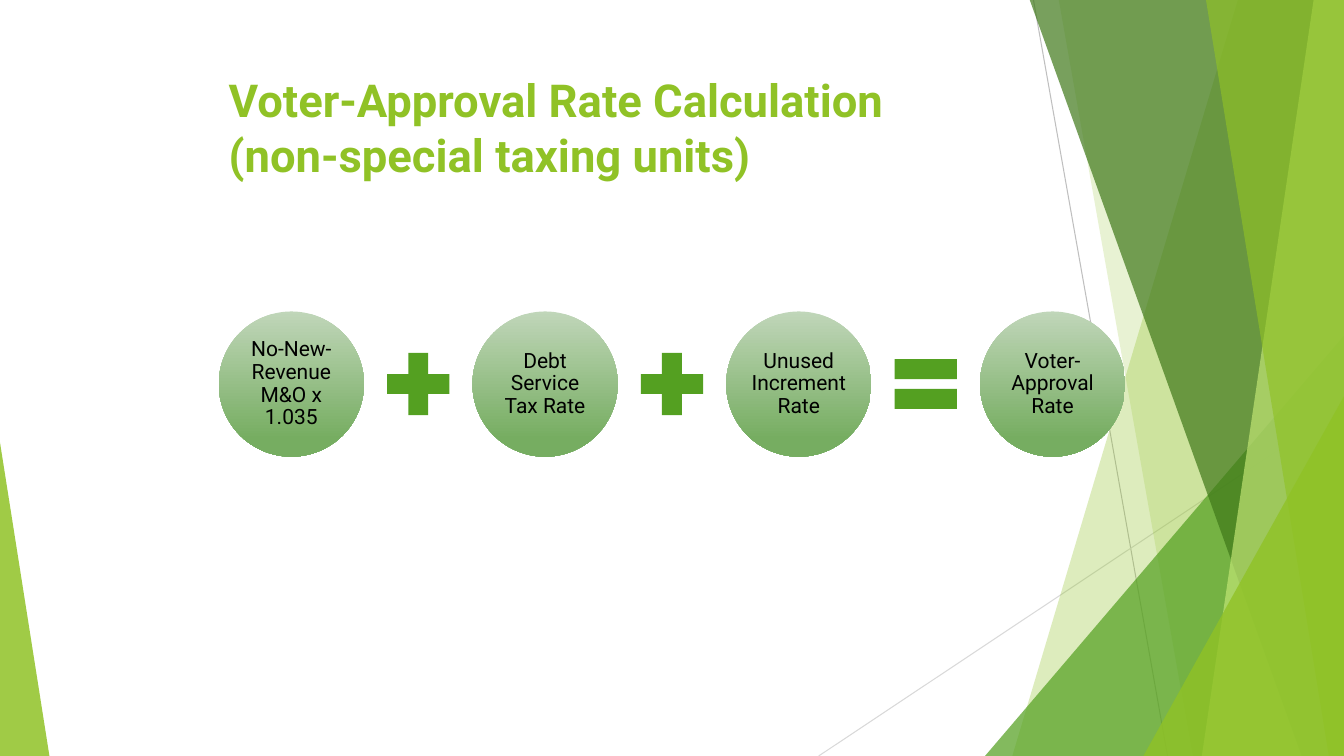
from pptx import Presentation
from pptx.dml.color import RGBColor
from pptx.enum.shapes import MSO_CONNECTOR, MSO_SHAPE
from pptx.enum.text import MSO_ANCHOR, PP_ALIGN
from pptx.oxml.ns import qn
from pptx.util import Inches, Pt
from lxml.etree import SubElement

LIME, GREEN, BLACK = "90C226", "54A021", "000000"


def color(code):
    return RGBColor.from_string(code)


class SlideBuilder:
    """Holds the style and the current page."""

    font = "Roboto"
    gradient = [(0, "C0D6B9"), (0.88, "76AD61")]

    def __init__(self, page):
        self.page = page

    def line(self, start, end, code):
        ends = [Inches(value) for value in start + end]
        connector = self.page.shapes.add_connector(MSO_CONNECTOR.STRAIGHT, *ends)
        connector.line.color.rgb = color(code)
        connector.line.width = Pt(0.75)
        SubElement(connector._element.spPr, qn("a:effectLst"))

    def paint(self, shape, code, opacity=100):
        shape.shadow.inherit = False
        shape.line.fill.background()
        shape.fill.solid()
        shape.fill.fore_color.rgb = color(code)
        if opacity < 100:
            tone = shape._element.spPr.find(".//" + qn("a:srgbClr"))
            SubElement(tone, qn("a:alpha"), val=str(opacity * 1000))

    def band(self, points, code, opacity):
        corners = [(Inches(x), Inches(y)) for x, y in points]
        outline = self.page.shapes.build_freeform(*corners[0], scale=1.0)
        outline.add_line_segments(corners[1:], close=True)
        self.paint(outline.convert_to_shape(), code, opacity)

    def shape(self, kind, place, code, opacity=100, apex=None):
        shape = self.page.shapes.add_shape(kind, *[Inches(value) for value in place])
        if apex is not None:
            shape.adjustments[0] = apex
        self.paint(shape, code, opacity)
        return shape

    def fill_text(self, frame, lines, frame_format, para_format, font_format, code):
        for name, value in frame_format.items():
            setattr(frame, name, value)
        para = frame.paragraphs[0]
        for name, value in para_format.items():
            setattr(para, name, value)
        for index, text in enumerate(lines):
            if index:
                para.add_line_break()
            span = para.add_run()
            span.text = text
            for name, value in font_format.items():
                setattr(span.font, name, value)
            span.font.name = self.font
            span.font.color.rgb = color(code)

    def title(self, place, lines):
        box = self.page.shapes.add_textbox(*[Inches(value) for value in place])
        self.fill_text(box.text_frame, lines,
                       {"word_wrap": True, "vertical_anchor": MSO_ANCHOR.TOP},
                       {"alignment": PP_ALIGN.LEFT},
                       {"size": Pt(32.4), "bold": True}, LIME)

    def circle(self, place, text):
        circle = self.shape(MSO_SHAPE.OVAL, place, GREEN)
        circle.fill.gradient()
        circle.fill.gradient_angle = 270
        for stop, (position, code) in zip(circle.fill.gradient_stops, self.gradient):
            stop.position = position
            stop.color.rgb = color(code)
        sides = ("left", "top", "right", "bottom")
        frame_format = {f"margin_{side}": Inches(0.02) for side in sides}
        frame_format.update(word_wrap=True, vertical_anchor=MSO_ANCHOR.MIDDLE)
        self.fill_text(circle.text_frame, [text], frame_format,
                       {"alignment": PP_ALIGN.CENTER, "line_spacing": 0.9},
                       {"size": Pt(15)}, BLACK)


def main():
    deck = Presentation()
    deck.slide_width, deck.slide_height = Inches(13.33), Inches(7.5)
    builder = SlideBuilder(deck.slides.add_slide(deck.slide_layouts[6]))

    # Background facets, from back to front
    right, top, bottom = 13.33, -0.01, 7.5

    def facet(top_x, bottom_x, code, opacity):
        points = [(top_x, top), (right, top), (right, bottom), (bottom_x, bottom)]
        builder.band(points, code, opacity)

    def corner(left, peak, width, code, opacity, apex):
        place = (left, peak, width, bottom - peak)
        builder.shape(MSO_SHAPE.ISOSCELES_TRIANGLE, place, code, opacity, apex)

    builder.line((10.25, 0), (11.58, bottom), "BFBFBF")
    builder.line((right, 4.03), (8.12, bottom), "D9D9D9")
    facet(12.28, 10.04, LIME, 30)
    facet(10.5, 11.83, LIME, 20)
    corner(9.77, 3.33, 3.56, GREEN, 72, 1)
    facet(10.21, 12.91, "3F7819", 70)
    facet(13.03, 11.92, "C0E474", 70)
    facet(11.96, 13.18, LIME, 65)
    corner(11.34, 3.93, 1.99, LIME, 80, 1)
    corner(0, 4.39, 0.49, LIME, 85, 0)

    # Title
    builder.title((2.17, 0.67, 9, 1.25),
                  ["Voter-Approval Rate Calculation", "(non-special taxing units)"])

    # Equation: each term is followed by its operator
    plus, equal = MSO_SHAPE.MATH_PLUS, MSO_SHAPE.MATH_EQUAL
    terms = [
        ("No-New-Revenue M&O x 1.035", plus),
        ("Debt Service Tax Rate", plus),
        ("Unused Increment Rate", equal),
        ("Voter-Approval Rate", None),
    ]
    first, last, diameter, sign = 2.17, 9.72, 1.44, 0.84
    pitch = (last - first) / (len(terms) - 1)
    gap = (pitch - diameter - sign) / 2
    for index, (text, operator) in enumerate(terms):
        left = first + index * pitch
        builder.circle((left, 3.09, diameter, diameter), text)
        if operator:
            place = (left + diameter + gap, 3.09 + (diameter - sign) / 2, sign, sign)
            builder.shape(operator, place, GREEN)

    deck.save("out.pptx")


if __name__ == "__main__":
    main()
